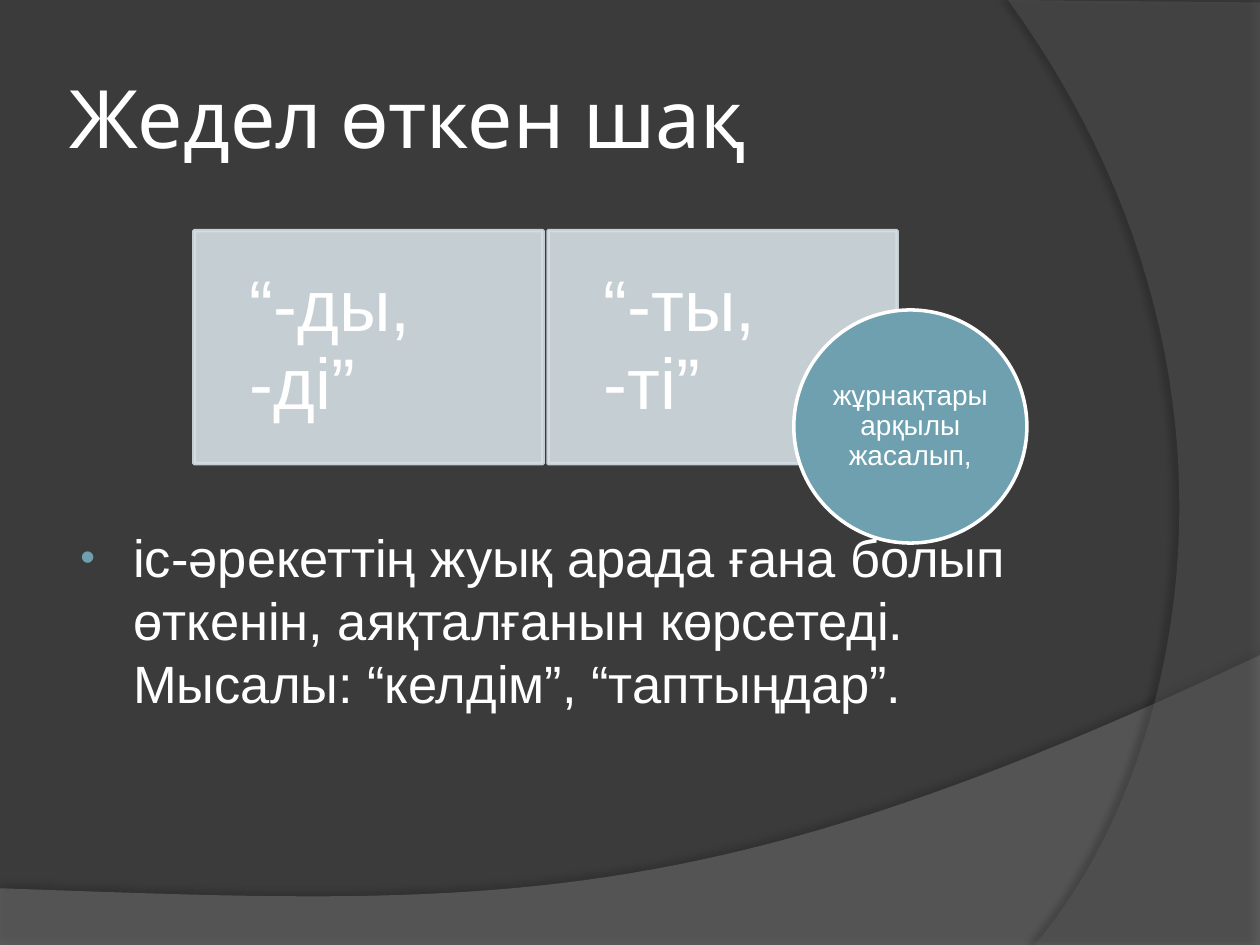
import pptx
import pptx.dml.color
import pptx.enum.shapes
import pptx.enum.text
import pptx.oxml
import pptx.oxml.ns
import pptx.util
import lxml.etree

Inches = pptx.util.Inches
Pt = pptx.util.Pt
RGBColor = pptx.dml.color.RGBColor
Shape = pptx.enum.shapes.MSO_SHAPE
Align = pptx.enum.text.PP_ALIGN
Anchor = pptx.enum.text.MSO_ANCHOR
qn = pptx.oxml.ns.qn

DARK = RGBColor(0x3B, 0x3B, 0x3B)
GRAY = RGBColor(0x7F, 0x7F, 0x7F)
SLATE = RGBColor(0x5E, 0x5E, 0x5E)
PALE = RGBColor(0xD5, 0xDF, 0xE4)
TEAL = RGBColor(0x6E, 0xA0, 0xB0)
WHITE = RGBColor(0xFF, 0xFF, 0xFF)
BLACK = RGBColor(0, 0, 0)


def add_node(base, tag, **attrs):
    node = lxml.etree.SubElement(base, qn(tag))
    for name, value in attrs.items():
        node.set(name, str(value))
    return node


def set_fill(fill, color, alpha=100):
    fill.solid()
    fill.fore_color.rgb = color
    if alpha < 100:
        for node in fill._xPr.iter(qn("a:solidFill")):
            if node.getparent() is fill._xPr:
                add_node(node[0], "a:alpha", val=alpha * 1000)


def add_shade(shape, alpha, dist, angle):
    shape.shadow.inherit = False
    effects = shape._element.spPr.find(qn("a:effectLst"))
    shade = add_node(effects, "a:outerShdw", blurRad=Pt(4), dist=Pt(dist),
                     dir=angle * 60000, algn="ctr", rotWithShape=0)
    tint = add_node(shade, "a:srgbClr", val=BLACK)
    add_node(tint, "a:alpha", val=alpha * 1000)


def trace_curve(start, first, second, end, steps=48):
    points = []
    for step in range(steps + 1):
        t = step / steps
        u = 1 - t
        points.append(tuple(
            u**3 * a + 3 * u * u * t * b + 3 * u * t * t * c + t**3 * d
            for a, b, c, d in zip(start, first, second, end)))
    return points


def add_wave(slide, points, color, alpha):
    points = [(Inches(x), Inches(y)) for x, y in points]
    form = slide.shapes.build_freeform(*points[0])
    form.add_line_segments(points[1:], close=True)
    wave = form.convert_to_shape()
    set_fill(wave.fill, color, alpha)
    wave.line.fill.background()
    return wave


def set_text(shape, words, size, font="Arial", anchor=Anchor.MIDDLE,
             insets=(0.05, 0.05, 0.05, 0.05)):
    frame = shape.text_frame
    frame.word_wrap = True
    frame.vertical_anchor = anchor
    (frame.margin_left, frame.margin_top,
     frame.margin_right, frame.margin_bottom) = map(Inches, insets)
    para = frame.paragraphs[0]
    para.alignment = Align.LEFT
    run = para.add_run()
    run.text = words
    run.font.size = Pt(size)
    run.font.name = font
    run.font.color.rgb = WHITE
    return para


def add_box(slide, left, top, width, height):
    return slide.shapes.add_textbox(*map(Inches, (left, top, width, height)))


def add_form(slide, kind, place, color, edge, alpha=100):
    shape = slide.shapes.add_shape(kind, *map(Inches, place))
    shape.shadow.inherit = False
    set_fill(shape.fill, color, alpha)
    shape.line.width = Pt(2)
    set_fill(shape.line.fill, edge, alpha)
    return shape


def add_bullet(para):
    props = para._p.get_or_add_pPr()
    props.set("marL", str(Inches(0.46)))
    props.set("indent", str(Inches(-0.42)))
    tint = add_node(props, "a:buClr")
    add_node(tint, "a:srgbClr", val=TEAL)
    add_node(props, "a:buSzPct", val=80000)
    add_node(props, "a:buFont", typeface="Arial")
    add_node(props, "a:buChar", char="•")


def add_waves(slide):
    low = trace_curve((10, 5.2), (5.59, 7.29), (3.91, 7.19), (0, 7.05))
    wave = add_wave(slide, [(0, 7.5), (10, 7.5)] + low, GRAY, 45)
    add_shade(wave, 35, 3.5, 270)
    side = trace_curve((8.21, 7.5), (9.35, 6.19), (10.18, 3), (8, 0))
    wave = add_wave(slide, [(10, 0.02), (10, 7.5)] + side, SLATE, 40)
    add_shade(wave, 45, 4, 180)


def add_cards(slide):
    for index, words in enumerate(("“-ды, -ді”", "“-ты, -ті”")):
        place = (1.54 + index * 2.81, 1.83, 2.77, 1.85)
        card = add_form(slide, Shape.RECTANGLE, place, PALE, PALE, 90)
        para = set_text(card, words, 41, insets=(0.44, 0.32, 0.32, 0.32))
        para.line_spacing = 0.9


def add_badge(slide):
    place = (6.3, 2.46, 1.85, 1.85)
    badge = add_form(slide, Shape.OVAL, place, TEAL, WHITE)
    para = set_text(badge, "жұрнақтары арқылы жасалып,", 16,
                    insets=(0, 0, 0, 0))
    para.alignment = Align.CENTER
    para.line_spacing = 0.9


def main():
    deck = pptx.Presentation()
    deck.slide_width = Inches(10)
    deck.slide_height = Inches(7.5)
    slide = deck.slides.add_slide(deck.slide_layouts[6])
    set_fill(slide.background.fill, DARK)
    add_waves(slide)
    title = add_box(slide, 0.5, 0.3, 8.17, 1.25)
    set_text(title, "Жедел өткен шақ", 46, "Karla")
    body = add_box(slide, 0.5, 4.12, 8.17, 2.58)
    para = set_text(
        body, "іс-әрекеттің жуық арада ғана болып өткенін, аяқталғанын "
        "көрсетеді. Мысалы: “келдім”, “таптыңдар”.", 30,
        anchor=Anchor.TOP, insets=(0.1, 0.05, 0.1, 0.05))
    add_bullet(para)
    add_cards(slide)
    add_badge(slide)
    deck.save("out.pptx")


if __name__ == "__main__":
    main()
